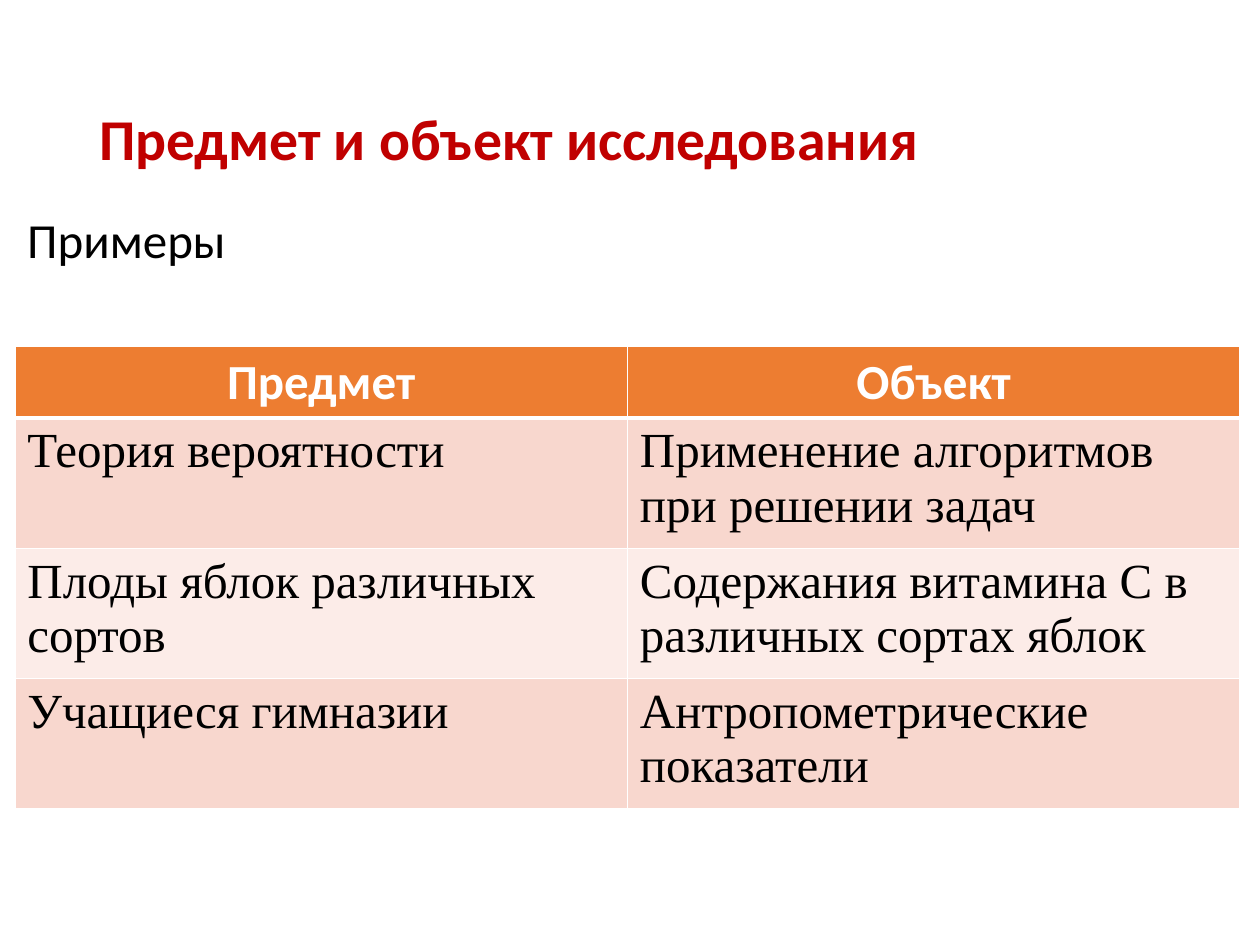
import pptx
import pptx.util
import pptx.dml.color
import pptx.enum.text
import pptx.oxml
import pptx.oxml.ns

Pt = pptx.util.Pt
RGBColor = pptx.dml.color.RGBColor
ALIGN = pptx.enum.text.PP_ALIGN
ANCHOR = pptx.enum.text.MSO_ANCHOR

RED = RGBColor(0xC0, 0x00, 0x00)
BLACK = RGBColor(0x00, 0x00, 0x00)
WHITE = RGBColor(0xFF, 0xFF, 0xFF)
ORANGE = RGBColor(0xED, 0x7D, 0x31)
PINK = RGBColor(0xF8, 0xD7, 0xCE)
PALE_PINK = RGBColor(0xFC, 0xEC, 0xE8)


def write(frame, text, size=28, font="Calibri", color=BLACK, bold=False, align=ALIGN.LEFT):
    frame.word_wrap = True
    paragraph = frame.paragraphs[0]
    paragraph.alignment = align
    run = paragraph.add_run()
    run.text = text
    run.font.size = Pt(size)
    run.font.name = font
    run.font.bold = bold
    run.font.color.rgb = color
    return paragraph


def add_border(cell, side, width):
    line = pptx.oxml.parse_xml(
        f'<a:{side} {pptx.oxml.ns.nsdecls("a")} w="{Pt(width)}">'
        f'<a:solidFill><a:srgbClr val="{WHITE}"/></a:solidFill></a:{side}>'
    )
    cell._tc.get_or_add_tcPr().append(line)


deck = pptx.Presentation()
deck.slide_width = Pt(720)
deck.slide_height = Pt(540)
slide = deck.slides.add_slide(deck.slide_layouts[5])

title = slide.shapes.title
title.left, title.top, title.width, title.height = Pt(49.5), Pt(28.75), Pt(621), Pt(104.4)
title.text_frame.vertical_anchor = ANCHOR.MIDDLE
heading = write(title.text_frame, "Предмет и объект исследования", size=33, color=RED, bold=True)
heading.line_spacing = 0.9

examples = slide.shapes.add_textbox(Pt(8.5), Pt(116), Pt(700), Pt(41))
write(examples.text_frame, "Примеры")

rows = [
    ("Предмет", "Объект"),
    ("Теория вероятности", "Применение алгоритмов при решении задач"),
    ("Плоды яблок различных сортов", "Содержания витамина С в различных сортах яблок"),
    ("Учащиеся гимназии", "Антропометрические показатели"),
]
row_heights = [40.8, 74.3, 74.3, 74.3]
row_fills = [ORANGE, PINK, PALE_PINK, PINK]

table = slide.shapes.add_table(
    len(rows), 2, Pt(8.5), Pt(198), Pt(700), Pt(sum(row_heights))
).table

for row_index, texts in enumerate(rows):
    table.rows[row_index].height = Pt(row_heights[row_index])
    is_header = row_index == 0
    for column_index, text in enumerate(texts):
        cell = table.cell(row_index, column_index)
        for side in ("lnL", "lnR", "lnT", "lnB"):
            header_edge = (is_header and side == "lnB") or (row_index == 1 and side == "lnT")
            add_border(cell, side, 3 if header_edge else 1)
        cell.fill.solid()
        cell.fill.fore_color.rgb = row_fills[row_index]
        if is_header:
            write(cell.text_frame, text, color=WHITE, bold=True, align=ALIGN.CENTER)
        else:
            write(cell.text_frame, text, font="Times New Roman")

deck.save("out.pptx")
